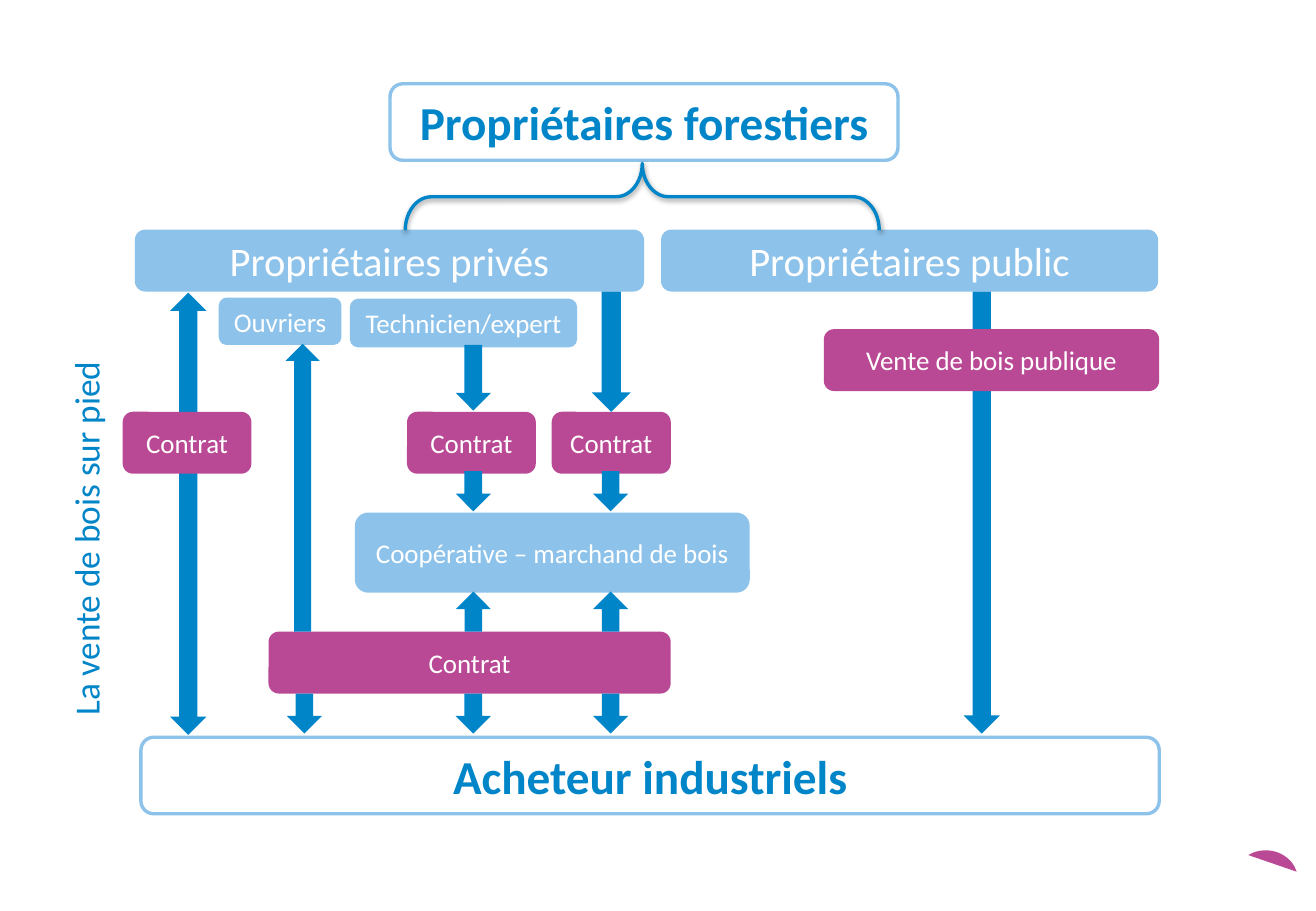
from lxml import etree
from pptx import Presentation
from pptx.dml.color import RGBColor
from pptx.enum.shapes import MSO_SHAPE
from pptx.enum.text import MSO_ANCHOR, MSO_AUTO_SIZE, PP_ALIGN
from pptx.oxml import parse_xml
from pptx.oxml.ns import nsdecls
from pptx.util import Pt

ROUNDED = MSO_SHAPE.ROUNDED_RECTANGLE
DOWN = MSO_SHAPE.DOWN_ARROW
UP_DOWN = MSO_SHAPE.UP_DOWN_ARROW
BRACE = MSO_SHAPE.LEFT_BRACE
CHORD = MSO_SHAPE.CHORD
CENTER, RIGHT, JUSTIFY = PP_ALIGN.CENTER, PP_ALIGN.RIGHT, PP_ALIGN.JUSTIFY
MIDDLE = MSO_ANCHOR.MIDDLE
GROW = MSO_AUTO_SIZE.SHAPE_TO_FIT_TEXT

PX = 9144  # 100 px to the inch
BLUE, SKY, PLUM, WHITE = "0085C8", "8DC2EA", "BA4995", "FFFFFF"


def add_part(kind, place, fill=None, line=None, rotation=0):
    part = slide.shapes.add_shape(kind, *[n * PX for n in place])
    part.shadow.inherit = False
    part.rotation = rotation
    if fill:
        part.fill.solid()
        part.fill.fore_color.rgb = RGBColor.from_string(fill)
    else:
        part.fill.background()
    if line:
        part.line.color.rgb = RGBColor.from_string(line)
        part.line.width = Pt(2)
    else:
        part.line.fill.background()
    return part


def write(part, text, size, color, align=CENTER, bold=False):
    paragraph = part.text_frame.paragraphs[0]
    paragraph.alignment = align
    run = paragraph.add_run()
    run.text = text
    run.font.name = "Calibri"
    run.font.size = Pt(size)
    run.font.bold = bold
    run.font.color.rgb = RGBColor.from_string(color)
    return run


prs = Presentation()
prs.slide_width, prs.slide_height = 1083 * PX, 750 * PX
slide = prs.slides.add_slide(prs.slide_layouts[6])

# Page number on its half-round tab
tab = add_part(CHORD, (1016, 700, 52, 47), PLUM, rotation=184.8)
for i, degrees in enumerate((48.24, 162)):
    tab.adjustments[i] = degrees * 0.6
page_number = slide.shapes.add_textbox(1022 * PX, 706 * PX, 45 * PX, 32 * PX)
page_number.text_frame.word_wrap = True
page_number.text_frame.vertical_anchor = MIDDLE
write(page_number, "6", 10, WHITE, RIGHT)

# Direct sales: long arrows that run behind the contracts
add_part(DOWN, (793, 240, 30, 364), BLUE)
add_part(UP_DOWN, (140, 241, 30, 364), BLUE)

# Actors and contracts: text, place, fill, line, size, text colour
boxes = [
    ("Propriétaires forestiers", (321, 69, 418, 63), WHITE, SKY, 28, BLUE),
    ("Propriétaires privés", (111, 189, 419, 51), SKY, None, 24, WHITE),
    ("Propriétaires public", (544, 189, 409, 51), SKY, None, 24, WHITE),
    ("Ouvriers", (180, 245, 101, 39), SKY, None, 16, WHITE),
    ("Technicien/expert", (288, 246, 187, 40), SKY, None, 16, WHITE),
    ("Contrat", (101, 339, 106, 51), PLUM, None, 16, WHITE),
    ("Contrat", (335, 339, 106, 51), PLUM, None, 16, WHITE),
    ("Contrat", (454, 339, 98, 51), PLUM, None, 16, WHITE),
    ("Coopérative – marchand de bois", (292, 422, 325, 66), SKY, None, 16, WHITE),
    ("Vente de bois publique", (678, 271, 276, 51), PLUM, None, 16, WHITE),
    ("Contrat", (221, 520, 331, 51), PLUM, None, 16, WHITE),
    ("Acheteur industriels", (116, 607, 838, 63), WHITE, SKY, 28, BLUE),
]
for text, place, fill, line, size, color in boxes:
    box = add_part(ROUNDED, place, fill, line)
    frame = box.text_frame
    frame.word_wrap = True
    frame.vertical_anchor = MIDDLE
    frame.margin_left = frame.margin_right = 0
    write(box, text, size, color, bold=size == 28)

# Brace splitting the owners into private and public
brace = add_part(BRACE, (501, -33, 55, 390), line=BLUE, rotation=90)
brace.adjustments[0], brace.adjustments[1] = 0.39, 0.5
effects = brace._element.spPr.find("{*}effectLst")
effects.append(parse_xml(
    f'<a:outerShdw {nsdecls("a")} blurRad="40000" dist="20000" dir="5400000" '
    'rotWithShape="0"><a:srgbClr val="000000"><a:alpha val="38000"/>'
    '</a:srgbClr></a:outerShdw>'))
etree.cleanup_namespaces(effects)

# Arrows from owners and their agents to the contracts
add_part(DOWN, (375, 284, 29, 54), BLUE)
add_part(DOWN, (487, 240, 32, 99), BLUE)
add_part(DOWN, (235, 283, 28, 237), BLUE, rotation=180)

# Short arrows around the cooperative and down to the buyers
for left in (375, 488):
    add_part(DOWN, (left, 388, 29, 33), BLUE)
    add_part(DOWN, (left, 487, 29, 33), BLUE, rotation=180)
for left in (236, 375, 488):
    add_part(DOWN, (left, 571, 29, 33), BLUE)

# Title up the left side, set as raised text
title = slide.shapes.add_textbox(-112 * PX, 395 * PX, 358 * PX, 50 * PX)
title.rotation = 270
title.text_frame.word_wrap = False
title.text_frame.auto_size = GROW
title_run = write(title, "La vente de bois sur pied", 36, BLUE, JUSTIFY)
title_run.font._element.set("baseline", "30000")

prs.save("out.pptx")
